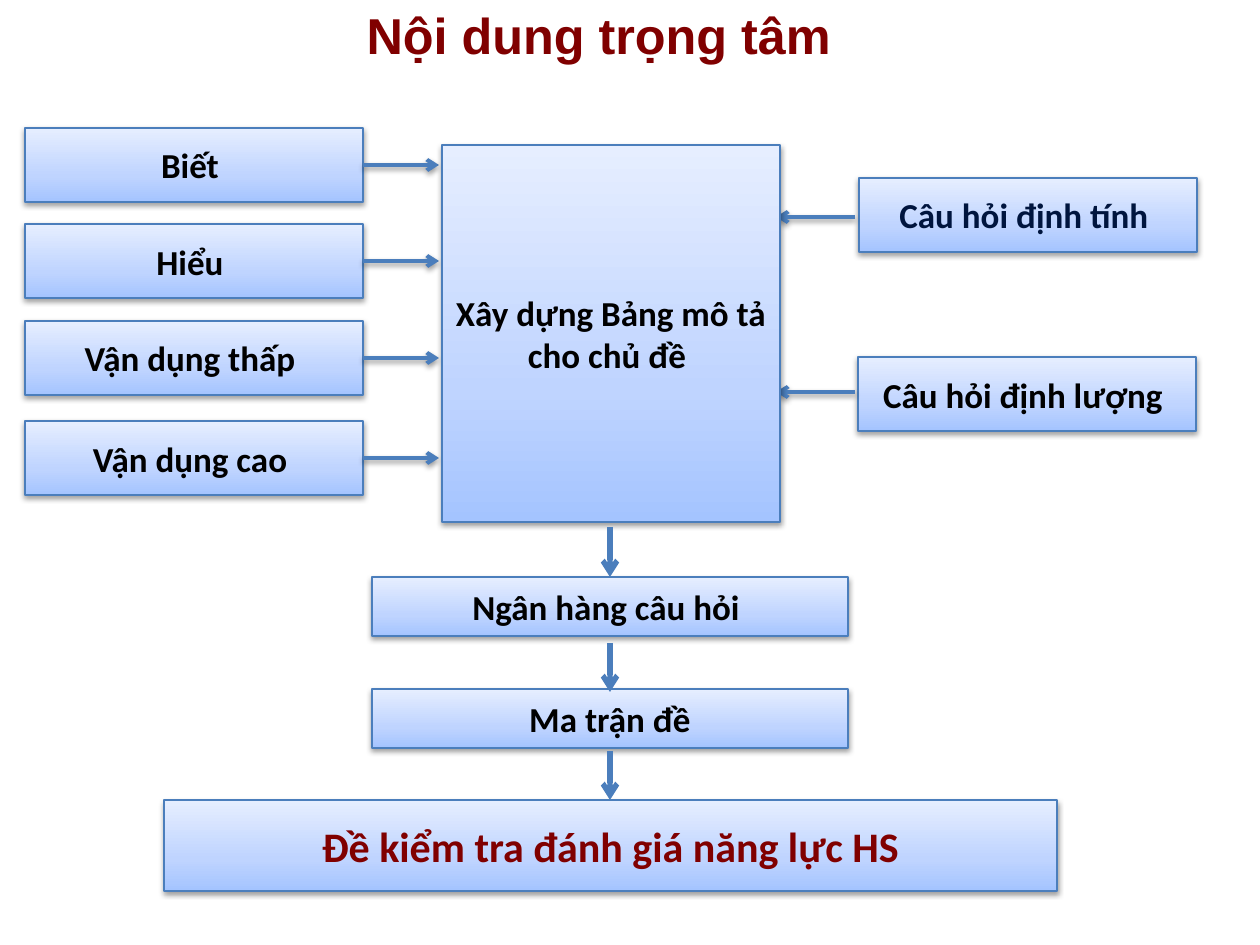
from copy import deepcopy

from pptx import Presentation
from pptx import util as u
from pptx.dml.color import RGBColor
from pptx.enum import shapes, text
from pptx.oxml import parse_xml
from pptx.oxml.ns import nsdecls, qn

EMU_PER_PX = 914400 / 126
MAROON = RGBColor(0x80, 0x00, 0x00)
BLACK = RGBColor(0x00, 0x00, 0x00)
NAVY = RGBColor(0x00, 0x15, 0x3E)
BLUE = RGBColor(0x4B, 0x7E, 0xBC)
GRADIENT = [
    (0, RGBColor(0xA4, 0xC4, 0xFF)),
    (0.35, RGBColor(0xBF, 0xD4, 0xFF)),
    (1, RGBColor(0xE6, 0xEE, 0xFF)),
]
SHADOW = (
    f'<a:effectLst {nsdecls("a")}>'
    '<a:outerShdw blurRad="40000" dist="20000" dir="5400000" rotWithShape="0">'
    '<a:srgbClr val="000000"><a:alpha val="38000"/></a:srgbClr>'
    '</a:outerShdw></a:effectLst>'
)
NO_SHADOW = f'<a:effectLst {nsdecls("a")}/>'
ARROW_TIP = f'<a:tailEnd {nsdecls("a")} type="arrow"/>'

SIDE_SIZE = (338, 74)
STEP_SIZE = (476, 59)
LEVELS = [
    ("Biết ", 25, 128),
    ("Hiểu ", 25, 224),
    ("Vận dụng thấp ", 25, 321),
    ("Vận dụng cao ", 25, 421),
]
QUESTIONS = [
    ("Câu hỏi định tính ", 859, 178, NAVY, 217),
    ("Câu hỏi định lượng ", 858, 357, BLACK, 392),
]
STEPS = [("Ngân hàng câu hỏi ", 577), ("Ma trận đề", 689)]
DOWN_ARROWS = [(527, 577), (643, 692), (751, 800)]


def px(value):
    return u.Emu(round(value * EMU_PER_PX))


def style_font(font, name, size, color):
    font.name = name
    font.size = u.Pt(size)
    font.bold = True
    font.color.rgb = color


def fill_gradient(shape):
    shape.fill.gradient()
    shape.fill.gradient_angle = 90
    stop_list = shape._element.spPr.find(qn("a:gradFill")).find(qn("a:gsLst"))
    stop_list.append(deepcopy(stop_list[-1]))
    for stop, (position, color) in zip(shape.fill.gradient_stops, GRADIENT):
        stop.position = position
        stop.color.rgb = color


def add_title(page, words):
    title = page.shapes.title
    title.left, title.top, title.width, title.height = map(px, (354, 0, 512, 68))
    frame = title.text_frame
    frame.text = words
    frame.auto_size = text.MSO_AUTO_SIZE.NONE
    frame.vertical_anchor = text.MSO_ANCHOR.MIDDLE
    para = frame.paragraphs[0]
    para.alignment = text.PP_ALIGN.LEFT
    style_font(para.font, "Arial", 28.8, MAROON)


def add_box(page, words, left, top, size, color=BLACK, font_size=20):
    box = page.shapes.add_shape(
        shapes.MSO_SHAPE.RECTANGLE, px(left), px(top), *map(px, size)
    )
    fill_gradient(box)
    box.line.color.rgb = BLUE
    box.line.width = u.Pt(0.75)
    box._element.spPr.append(parse_xml(SHADOW))
    frame = box.text_frame
    frame.text = words
    frame.word_wrap = True
    frame.vertical_anchor = text.MSO_ANCHOR.MIDDLE
    para = frame.paragraphs[0]
    para.alignment = text.PP_ALIGN.CENTER
    style_font(para.font, "Calibri", font_size, color)


def add_arrow(page, start, end, width=2.25, effect=SHADOW):
    arrow = page.shapes.add_connector(
        shapes.MSO_CONNECTOR.STRAIGHT, *map(px, start + end)
    )
    arrow.line.color.rgb = BLUE
    arrow.line.width = u.Pt(width)
    arrow.line._get_or_add_ln().append(parse_xml(ARROW_TIP))
    arrow._element.spPr.append(parse_xml(effect))


def main():
    deck = Presentation()
    deck.slide_width, deck.slide_height = px(1260), px(945)
    page = deck.slides.add_slide(deck.slide_layouts[5])
    add_title(page, "Nội dung trọng tâm")

    for words, left, top in LEVELS:
        middle = top + SIDE_SIZE[1] // 2
        add_box(page, words, left, top, SIDE_SIZE)
        add_arrow(page, (363, middle), (439, middle))
    for words, left, top, color, arrow_y in QUESTIONS:
        add_box(page, words, left, top, SIDE_SIZE, color)
        add_arrow(page, (855, arrow_y), (776, arrow_y))

    add_box(page, "Xây dựng Bảng mô tả cho chủ đề ", 442, 145, (338, 377))
    for words, top in STEPS:
        add_box(page, words, 372, top, STEP_SIZE)
    add_box(page, "Đề kiểm tra đánh giá năng lực HS", 164, 800, (893, 91), MAROON, 24)
    for top, bottom in DOWN_ARROWS:
        add_arrow(page, (610, top), (610, bottom), 3, NO_SHADOW)

    deck.save("out.pptx")


if __name__ == "__main__":
    main()
